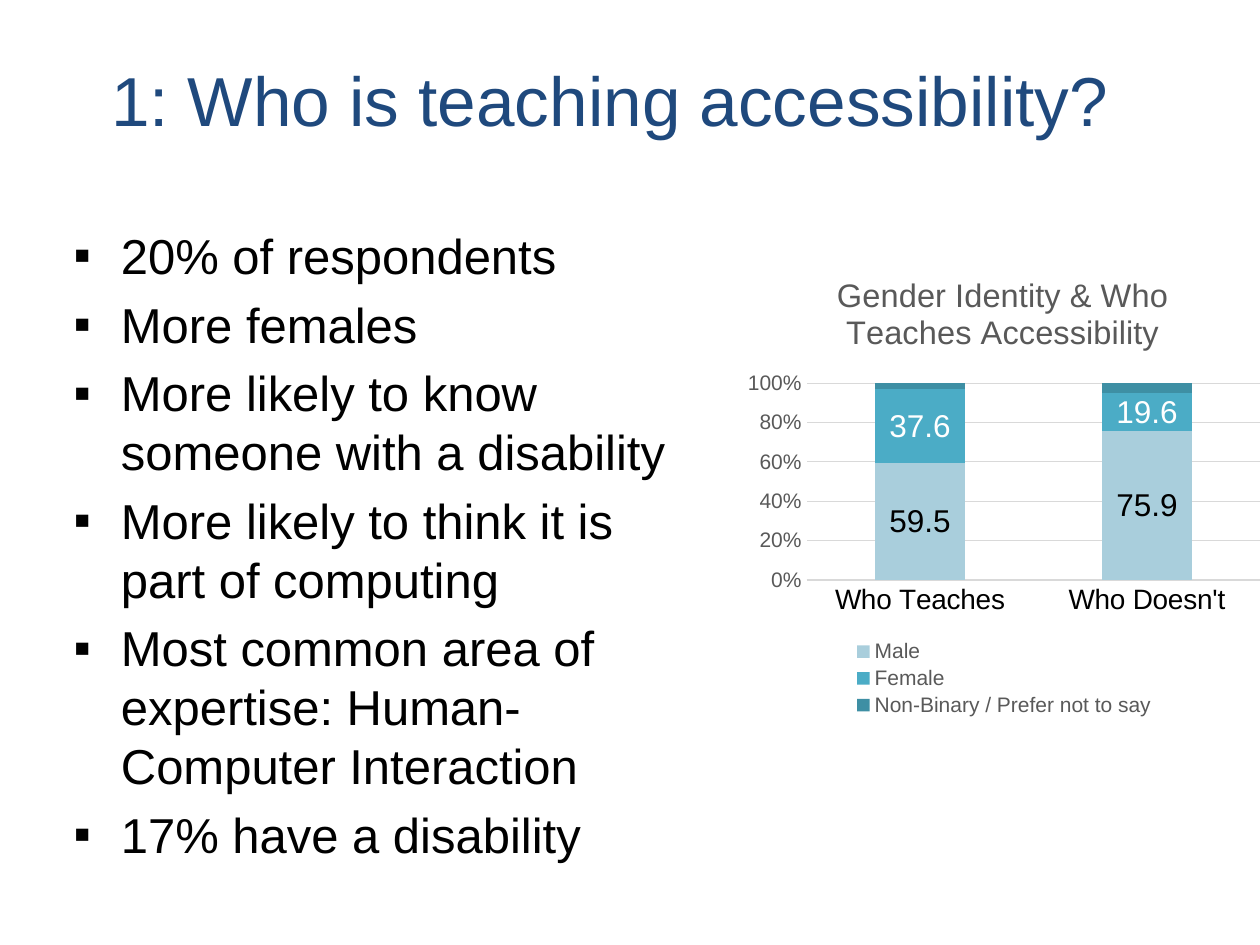
from lxml import etree
from pptx import Presentation
from pptx.chart.data import CategoryChartData
from pptx.dml.color import RGBColor
from pptx.enum.chart import XL_CHART_TYPE, XL_LEGEND_POSITION, XL_TICK_MARK
from pptx.enum.text import MSO_ANCHOR, PP_ALIGN
from pptx.oxml.ns import qn
from pptx.util import Pt

STACK = XL_CHART_TYPE.COLUMN_STACKED_100
BOTTOM = XL_LEGEND_POSITION.BOTTOM
NO_TICK = XL_TICK_MARK.NONE
TOP, MIDDLE = MSO_ANCHOR.TOP, MSO_ANCHOR.MIDDLE
LEFT, CENTER = PP_ALIGN.LEFT, PP_ALIGN.CENTER

NAVY = RGBColor(0x1F, 0x49, 0x7D)
BLACK = RGBColor(0, 0, 0)
WHITE = RGBColor(255, 255, 255)
GRAY = RGBColor(0x59, 0x59, 0x59)
SILVER = RGBColor(0xD9, 0xD9, 0xD9)
PALE = RGBColor(0xA9, 0xCE, 0xDC)
AQUA = RGBColor(0x4B, 0xAC, 0xC6)
TEAL = RGBColor(0x3E, 0x8F, 0xA4)

POINTS = [
    "20% of respondents",
    "More females",
    "More likely to know someone with a disability",
    "More likely to think it is part of computing",
    "Most common area of expertise: Human-Computer Interaction",
    "17% have a disability",
]
GROUPS = ["Who Teaches", "Who Doesn't"]
GENDERS = [
    ("Male", (59.5, 75.9), PALE, BLACK),
    ("Female", (37.6, 19.6), AQUA, WHITE),
    ("Non-Binary / Prefer not to say", (3, 5), TEAL, None),
]


def style(font, size, color):
    font.name = "Arial"
    font.size = Pt(size)
    font.bold = False
    font.color.rgb = color


def write(frame, text, size=18, color=BLACK, align=LEFT, bullet=None, gap=0):
    frame.text = text
    for i, para in enumerate(frame.paragraphs):
        para.alignment = align
        para.space_before = Pt(gap if i else 0)
        for run in para.runs:
            style(run.font, size, color)
        if bullet:
            props = para._p.get_or_add_pPr()
            props.set("marL", str(Pt(27)))
            props.set("indent", str(-Pt(27)))
            etree.SubElement(props, qn("a:buFont")).set("typeface", "Arial")
            etree.SubElement(props, qn("a:buChar")).set("char", bullet)


def place(node, index, inner=False, **sides):
    for old in node.findall(qn("c:layout")):
        node.remove(old)
    layout = etree.Element(qn("c:layout"))
    node.insert(index, layout)
    manual = etree.SubElement(layout, qn("c:manualLayout"))
    parts = [("layoutTarget", "inner")] if inner else []
    parts += [("xMode", "edge"), ("yMode", "edge"), *sides.items()]
    for name, value in parts:
        etree.SubElement(manual, qn("c:" + name)).set("val", str(value))


class Deck:
    def __init__(self, width, height):
        self.file = Presentation()
        self.file.slide_width = Pt(width)
        self.file.slide_height = Pt(height)
        self.slide = self.file.slides.add_slide(self.file.slide_layouts[6])

    def text(self, box, text, anchor=TOP, **form):
        shape = self.slide.shapes.add_textbox(*map(Pt, box))
        shape.text_frame.word_wrap = True
        shape.text_frame.vertical_anchor = anchor
        write(shape.text_frame, text, **form)

    def chart(self, box, title, groups, rows):
        data = CategoryChartData()
        data.categories = groups
        for name, values, *_ in rows:
            data.add_series(name, values)
        chart = self.slide.shapes.add_chart(STACK, *map(Pt, box), data).chart
        style(chart.font, 10, BLACK)
        chart.has_title = True
        write(chart.chart_title.text_frame, title, size=18.6, color=GRAY,
              align=CENTER)
        chart.chart_title.include_in_layout = False
        self.bars(chart.plots[0], rows)
        self.axes(chart)
        chart.has_legend = True
        legend = chart.legend
        legend.position = BOTTOM
        legend.include_in_layout = False
        style(legend.font, 12, GRAY)
        place(chart.chart_title._element, 1, x=0.18, y=0.04)
        place(legend._element, 1, x=0.22, y=0.82, w=0.56, h=0.18)
        area = chart._chartSpace.find(".//" + qn("c:plotArea"))
        place(area, 0, inner=True, x=0.13, y=0.28, w=0.85, h=0.42)

    def bars(self, plot, rows):
        plot.gap_width = 150
        plot.overlap = 100
        plot.vary_by_categories = False
        for bar, (_, _, fill, ink) in zip(plot.series, rows):
            bar.format.fill.solid()
            bar.format.fill.fore_color.rgb = fill
            if ink is not None:
                bar.data_labels.show_value = True
                style(bar.data_labels.font, 18, ink)

    def axes(self, chart):
        across, up = chart.category_axis, chart.value_axis
        for axis, size, color in ((across, 16, BLACK), (up, 12, GRAY)):
            axis.major_tick_mark = axis.minor_tick_mark = NO_TICK
            style(axis.tick_labels.font, size, color)
        up.minimum_scale, up.maximum_scale, up.major_unit = 0, 1, 0.2
        up.tick_labels.number_format = "0%"
        up.tick_labels.number_format_is_linked = False
        up.has_major_gridlines = True
        up.format.line.fill.background()
        for line in (across.format.line, up.major_gridlines.format.line):
            line.color.rgb = SILVER
            line.width = Pt(0.75)


def main():
    deck = Deck(720, 540)
    deck.text((24.5, 11.5, 648, 90), "1: Who is teaching accessibility?",
              anchor=MIDDLE, size=39.6, color=NAVY, align=CENTER)
    deck.text((35, 125.3, 368.6, 324.7), "\n".join(POINTS),
              size=28, bullet="▪", gap=5.6)
    deck.chart((421.2, 144, 305.3, 267.8),
               "Gender Identity & Who\nTeaches Accessibility", GROUPS, GENDERS)
    deck.file.save("out.pptx")


if __name__ == "__main__":
    main()
